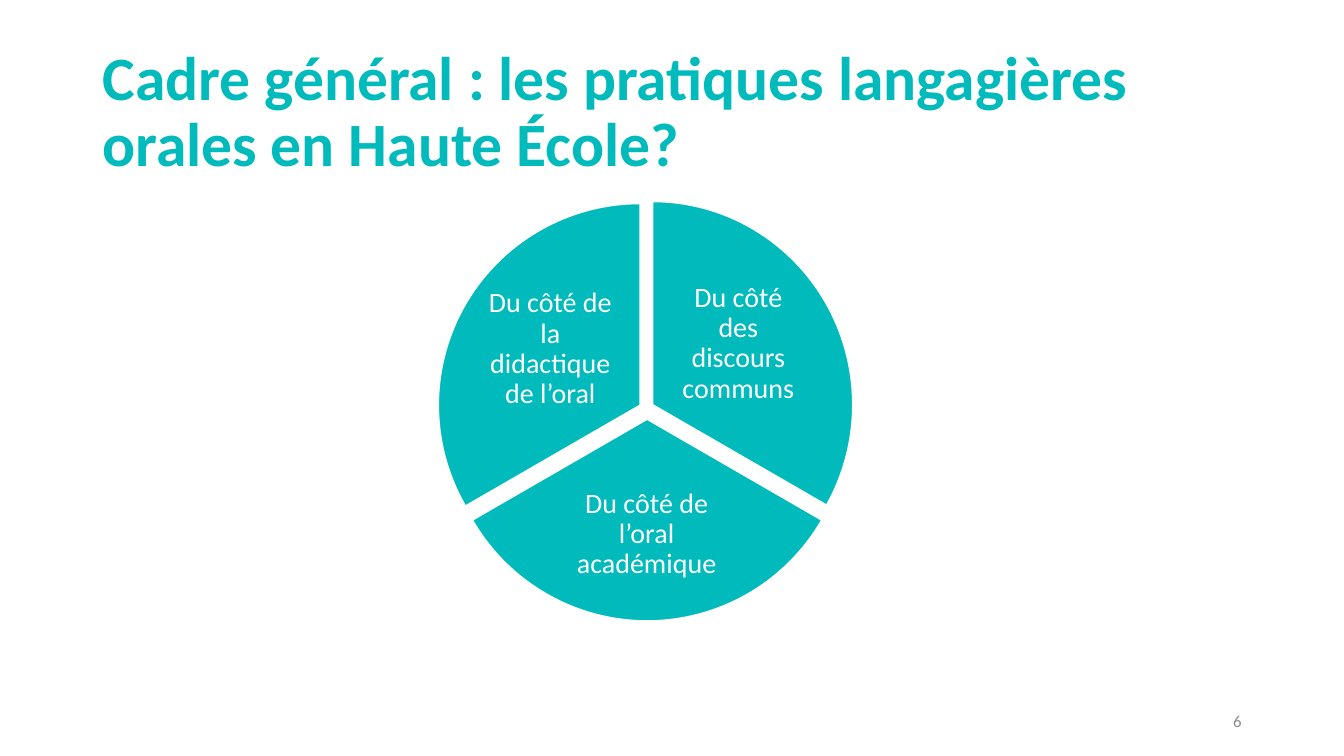
from pptx import Presentation
from pptx import util as u
from pptx.dml.color import RGBColor
from pptx.enum import shapes, text

HUES = {"teal": "00BABC", "white": "FFFFFF", "grey": "8C8C8C"}
SIZE = (960, 540)
TITLE = "Cadre général : les pratiques langagières orales en Haute École?"
TITLE_BOX = (66, 28.8, 828, 104.4)
PAGE = "6"
PAGE_BOX = (678, 500.5, 216, 28.75)
ARC = 120
START = 270
SECTORS = [
    ("Du côté des discours communs",
     (323.28, 144, 285.84, 290.16), (478.8, 197.28, 97.2, 96.48)),
    ("Du côté de l’oral académique",
     (318.24, 155.52, 288, 288), (396.72, 336.96, 130.32, 89.28)),
    ("Du côté de la didactique de l’oral",
     (313.2, 145.44, 288, 288), (344.16, 201.6, 97.92, 95.76)),
]
ALIGN = text.PP_ALIGN
HEAD = {"size": u.Pt(44), "bold": True, "name": "Calibri"}
LABEL = {"size": u.Pt(20), "name": "Calibri"}
NUMBER = {"size": u.Pt(12), "name": "Calibri"}


def color(name):
    return RGBColor.from_string(HUES[name])


def pts(box):
    return [u.Pt(v) for v in box]


def write(shape, words, font, hue, align, pad=None, lead=None):
    frame = shape.text_frame
    frame.word_wrap = True
    frame.auto_size = text.MSO_AUTO_SIZE.NONE
    frame.vertical_anchor = text.MSO_ANCHOR.MIDDLE
    if pad is not None:
        for side in ("left", "top", "right", "bottom"):
            setattr(frame, "margin_" + side, u.Pt(pad))
    para = frame.paragraphs[0]
    para.alignment = align
    para.line_spacing = lead
    run = para.add_run()
    run.text = words
    for key, val in font.items():
        setattr(run.font, key, val)
    run.font.color.rgb = color(hue)


def add_pie(group, box, start):
    pie = group.shapes.add_shape(shapes.MSO_SHAPE.PIE, *pts(box))
    for i, angle in enumerate((start, start + ARC)):
        pie.adjustments[i] = angle % 360 * 0.6
    pie.shadow.inherit = False
    pie.fill.solid()
    pie.fill.fore_color.rgb = color("teal")
    pie.line.color.rgb = color("white")
    pie.line.width = u.Pt(1)


def main():
    deck = Presentation()
    deck.slide_width, deck.slide_height = pts(SIZE)
    slide = deck.slides.add_slide(deck.slide_layouts[5])

    title = slide.shapes.title
    for key, val in zip(("left", "top", "width", "height"), pts(TITLE_BOX)):
        setattr(title, key, val)
    write(title, TITLE, HEAD, "teal", ALIGN.LEFT, lead=0.9)

    wheel = slide.shapes.add_group_shape()
    for i, (words, box, area) in enumerate(SECTORS):
        add_pie(wheel, box, START + i * ARC)
        label = wheel.shapes.add_textbox(*pts(area))
        write(label, words, LABEL, "white", ALIGN.CENTER, pad=2, lead=0.9)

    page = slide.shapes.add_textbox(*pts(PAGE_BOX))
    write(page, PAGE, NUMBER, "grey", ALIGN.RIGHT)
    deck.save("out.pptx")


if __name__ == "__main__":
    main()
